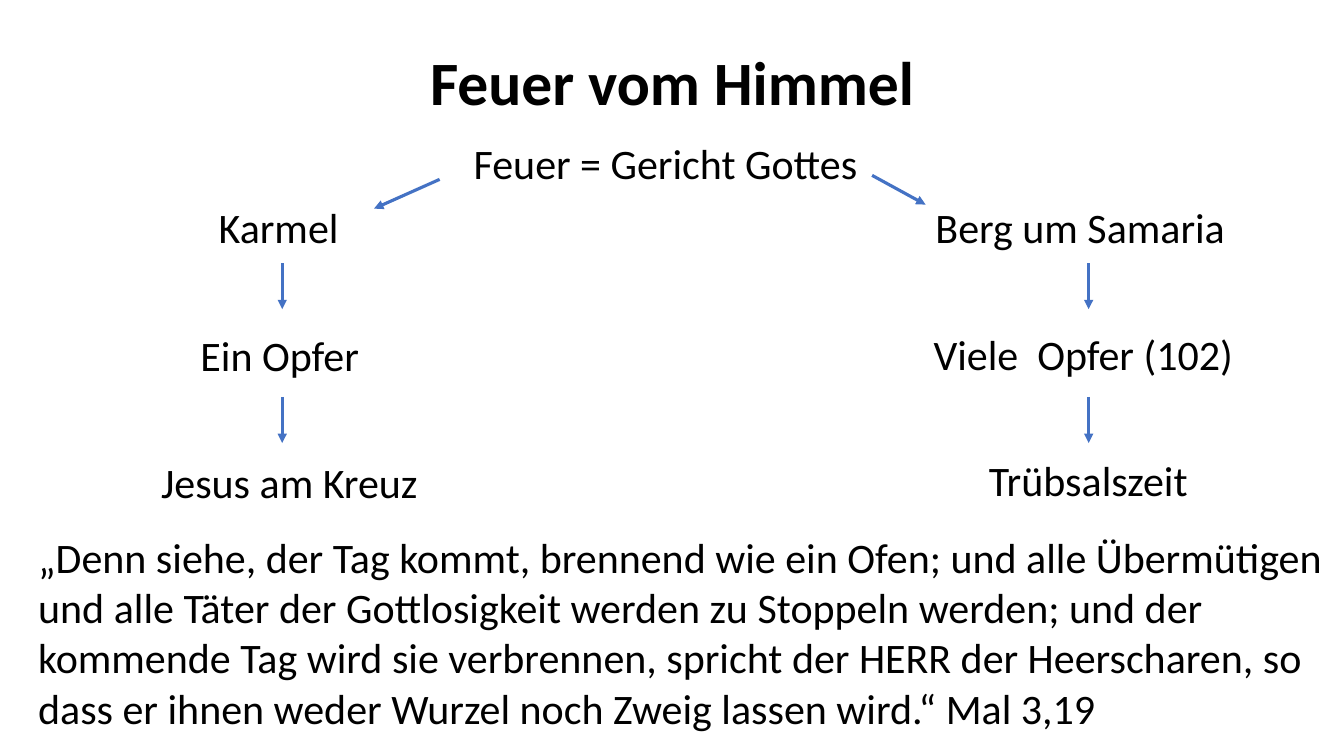
from dataclasses import dataclass

from lxml import etree
from pptx import Presentation
from pptx import util as u
from pptx.dml.color import RGBColor
from pptx.enum import shapes, text
from pptx.oxml import ns


@dataclass(frozen=True)
class Theme:
    font: str = "Calibri"
    ink: str = "000000"
    arrow: str = "4472C4"
    title: int = 44
    body: int = 30
    stroke: float = 2.25
    label_h: float = 7.47


THEME = Theme()
WIDTH, HEIGHT = u.Inches(13.33), u.Inches(7.5)


def col(share):
    return round(WIDTH * share / 100)


def row(share):
    return round(HEIGHT * share / 100)


def add_text(s, box, words, size=THEME.body, bold=False, align=text.PP_ALIGN.LEFT,
             anchor=text.MSO_ANCHOR.TOP, line=0.9, before=10, grow=True):
    x, y, w, h = box
    tf = s.shapes.add_textbox(col(x), row(y), col(w), row(h)).text_frame
    tf.word_wrap = True
    tf.vertical_anchor = anchor
    tf.auto_size = text.MSO_AUTO_SIZE.SHAPE_TO_FIT_TEXT if grow else text.MSO_AUTO_SIZE.NONE
    p = tf.paragraphs[0]
    p.alignment = align
    p.line_spacing = line
    p.space_before = u.Pt(before)
    r = p.add_run()
    r.text = words
    r.font.name = THEME.font
    r.font.size = u.Pt(size)
    r.font.bold = bold
    r.font.color.rgb = RGBColor.from_string(THEME.ink)


def add_arrow(s, x1, y1, x2, y2):
    c = s.shapes.add_connector(shapes.MSO_CONNECTOR.STRAIGHT, col(x1), row(y1), col(x2), row(y2))
    c.line.color.rgb = RGBColor.from_string(THEME.arrow)
    c.line.width = u.Pt(THEME.stroke)
    etree.SubElement(c.line._get_or_add_ln(), ns.qn("a:tailEnd"), type="triangle")
    etree.SubElement(c._element.spPr, ns.qn("a:effectLst"))


def add_title(s, box):
    add_text(s, box, "Feuer vom Himmel", size=THEME.title, bold=True, before=0, grow=False,
             align=text.PP_ALIGN.CENTER, anchor=text.MSO_ANCHOR.MIDDLE)


def add_topic(s, box):
    x, y, w, h = box
    add_text(s, box, "Feuer = Gericht Gottes")
    add_arrow(s, x - 1.8, y + 5.46, x - 6.68, y + 9.33)
    add_arrow(s, x + w - 0.68, y + 4.93, x + w + 3.3, y + 8.8)


def add_chain(s, box, arrow_dx, labels):
    x, y, w, h = box
    step = (h - THEME.label_h) / (len(labels) - 1)
    for i, (words, dx, label_w) in enumerate(labels):
        add_text(s, (x + dx, y + i * step, label_w, THEME.label_h), words)
    for i in range(len(labels) - 1):
        top = y + 8 + i * 17.7
        add_arrow(s, x + arrow_dx, top, x + arrow_dx, top + 6.1)


def add_quote(s, box):
    add_text(s, box, "„Denn siehe, der Tag kommt, brennend wie ein Ofen; und alle Übermütigen "
             "und alle Täter der Gottlosigkeit werden zu Stoppeln werden; und der kommende Tag "
             "wird sie verbrennen, spricht der HERR der Heerscharen, so dass er ihnen weder "
             "Wurzel noch Zweig lassen wird.“ Mal 3,19", line=1.0, before=0)


def main():
    prs = Presentation()
    prs.slide_width, prs.slide_height = WIDTH, HEIGHT
    s = prs.slides.add_slide(prs.slide_layouts[6])
    add_title(s, (6.9, 5.33, 86.27, 11.87))
    add_topic(s, (34.51, 18.27, 31.06, THEME.label_h))
    add_chain(s, (11.25, 26.8, 21.53, 41.2), 9.75, [
        ("Karmel", 4.28, 10.5),
        ("Ein Opfer", 2.93, 13.65),
        ("Jesus am Kreuz", 0, 21.53),
    ])
    add_chain(s, (68.72, 26.8, 24.53, 40.94), 12.28, [
        ("Berg um Samaria", 0.15, 24.23),
        ("Viele  Opfer (102)", 0, 24.53),
        ("Trübsalszeit", 4.12, 16.43),
    ])
    add_quote(s, (2.1, 69.6, 97.9, 28.27))
    prs.save("out.pptx")


if __name__ == "__main__":
    main()
